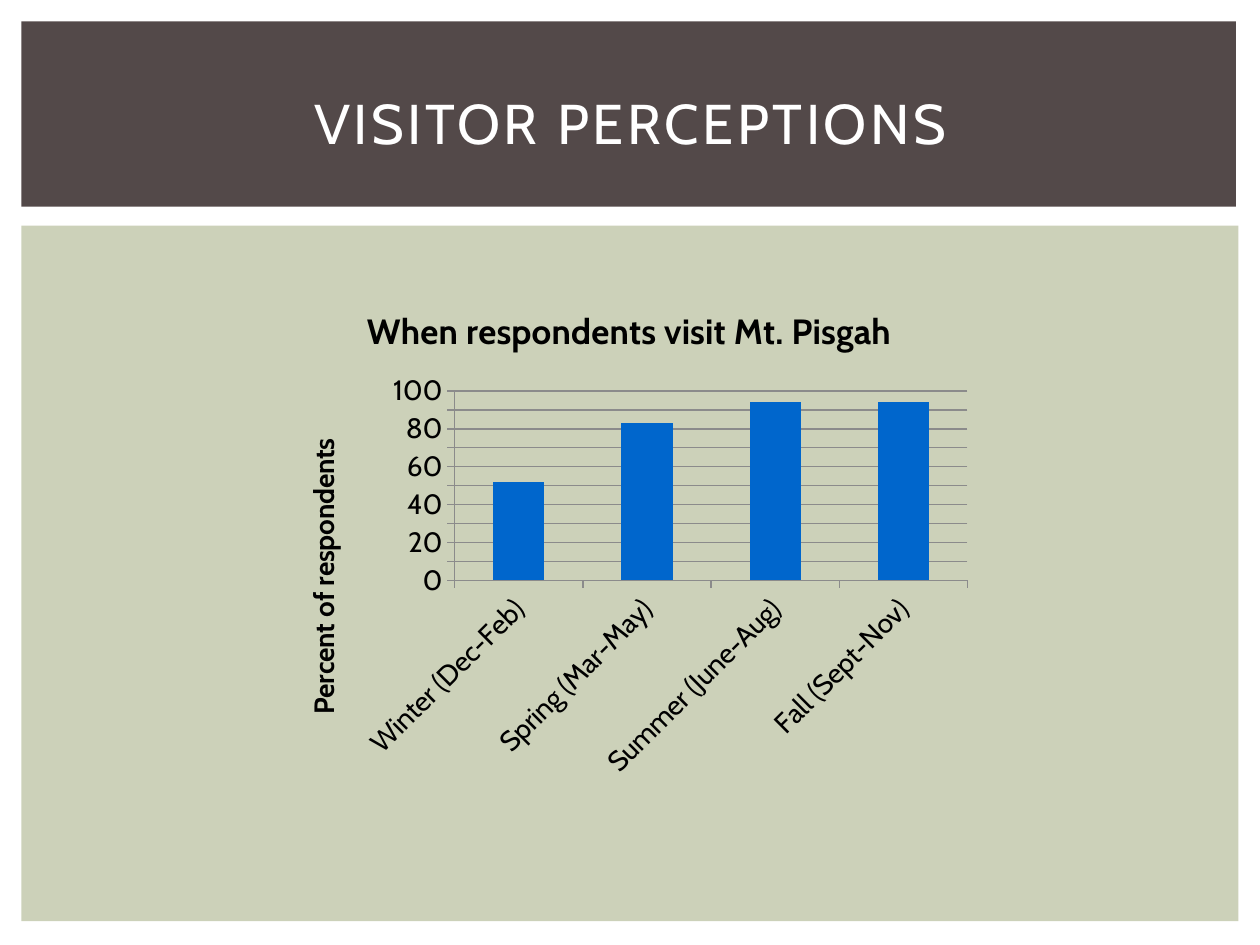
from pptx import Presentation
from pptx.chart.data import CategoryChartData as ChartData
from pptx.dml.color import RGBColor as RGB
from pptx.enum.chart import XL_CHART_TYPE as Kind, XL_TICK_MARK as Tick
from pptx.enum.shapes import MSO_SHAPE as Shape
from pptx.enum.text import MSO_ANCHOR as Anchor, PP_ALIGN as Align
from pptx.util import Pt

PX = 9144  # 100 px to the inch
THEME = {
    "font": "Cabin",
    "band": RGB.from_string("534949"),
    "panel": RGB.from_string("CCD1B9"),
    "bar": RGB.from_string("0066CC"),
    "grid": RGB.from_string("8B8B8B"),
    "light": RGB.from_string("FFFFFF"),
    "dark": RGB.from_string("000000"),
    "head": Pt(32),
    "title": Pt(20),
    "label": Pt(16),
}


def box(*px):
    return [n * PX for n in px]


def style(font, size, color, bold=False):
    look = {"name": THEME["font"], "size": THEME[size], "bold": bold}
    for key, val in look.items():
        setattr(font, key, val)
    font.color.rgb = THEME[color]


deck = Presentation()
deck.slide_width, deck.slide_height = box(1000, 750)
slide = deck.slides.add_slide(deck.slide_layouts[6])

# Background panel and title band
for place, fill in (((17, 179, 966, 552), "panel"), ((17, 17, 964, 147), "band")):
    rect = slide.shapes.add_shape(Shape.RECTANGLE, *box(*place))
    rect.shadow.inherit = False
    rect.fill.solid()
    rect.fill.fore_color.rgb = THEME[fill]
    rect.line.fill.background()

# Heading
frame = slide.shapes.add_textbox(*box(42, 39, 917, 115)).text_frame
frame.word_wrap = True
frame.vertical_anchor = Anchor.MIDDLE
para = frame.paragraphs[0]
para.alignment = Align.CENTER
run = para.add_run()
run.text = "VISITOR PERCEPTIONS"
style(run.font, "head", "light")
run.font._element.set("spc", "200")

# Chart of visits by season
data = ChartData()
data.categories = ["Winter (Dec-Feb)", "Spring (Mar-May)", "Summer (June-Aug)", "Fall (Sept-Nov)"]
data.add_series("Series 1", [52, 83, 94, 94])
chart = slide.shapes.add_chart(Kind.COLUMN_CLUSTERED, *box(220, 225, 559, 401), data).chart
style(chart.font, "label", "dark")
chart.has_legend = False

plot = chart.plots[0]
plot.gap_width = 150
plot.vary_by_categories = False
bars = plot.series[0].format.fill
bars.solid()
bars.fore_color.rgb = THEME["bar"]

cat, val = chart.category_axis, chart.value_axis
scale = {"minimum_scale": 0, "maximum_scale": 100, "major_unit": 10, "has_major_gridlines": True}
for key, num in scale.items():
    setattr(val, key, num)
for axis in (cat, val):
    axis.major_tick_mark = Tick.OUTSIDE
    style(axis.tick_labels.font, "label", "dark")
for part in (cat, val, val.major_gridlines):
    part.format.line.color.rgb = THEME["grid"]
    part.format.line.width = Pt(0.75)
cat._element.txPr.bodyPr.set("rot", "-2700000")

for name, text, size in (
    (chart.chart_title, "When respondents visit Mt. Pisgah", "title"),
    (val.axis_title, "Percent of respondents", "label"),
):
    name.text_frame.text = text
    style(name.text_frame.paragraphs[0].runs[0].font, size, "dark", True)
val.axis_title.text_frame._txBody.bodyPr.set("rot", "-5400000")

deck.save("out.pptx")
